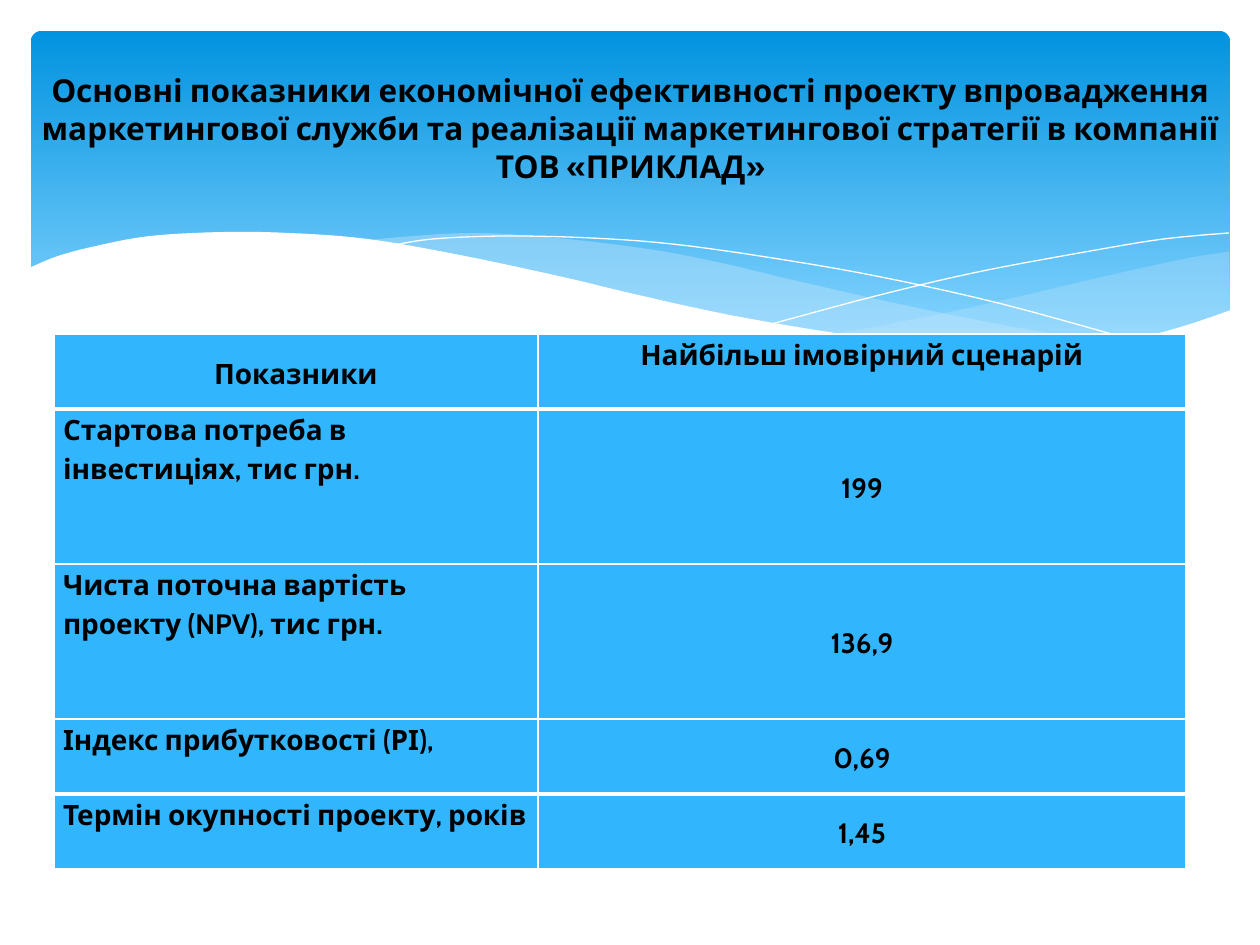
from lxml.etree import SubElement
from pptx import Presentation
from pptx.dml.color import RGBColor
from pptx.enum.shapes import MSO_SHAPE
from pptx.enum.text import MSO_ANCHOR, PP_ALIGN
from pptx.oxml.ns import qn
from pptx.util import Emu, Pt

PX = 914400 // 126
FONT = "Cabin"
COLORS = {
    "sky_dark": "0293E0",
    "sky_light": "83D3FE",
    "wave": "C6E7FC",
    "cell": "31B6FD",
    "white": "FFFFFF",
    "text": "000000",
}

TITLE = (
    "Основні показники економічної ефективності проекту впровадження "
    "маркетингової служби та реалізації маркетингової стратегії в компанії "
    "ТОВ «ПРИКЛАД»"
)
ROWS = [
    ("Показники", "Найбільш імовірний сценарій"),
    ("Стартова потреба в інвестиціях, тис грн.", "199"),
    ("Чиста поточна вартість проекту (NPV), тис грн.", "136,9"),
    ("Індекс прибутковості (РІ),", "0,69"),
    ("Термін окупності проекту, років", "1,45"),
]
COLUMN_WIDTHS = [484, 648]
ROW_HEIGHTS = [75, 155, 155, 75, 75]
THICK_RULES = (1, 4)

RIGHT_WAVE = [
    [(1229, 252), (1194, 257), (1142, 268), (1085, 281), (982, 305), (890, 324), (833, 334)],
    [(833, 334), (888, 341), (954, 348), (1026, 350), (1087, 347), (1150, 336),
     (1196, 324), (1230, 311)],
]
MIDDLE_WAVE = [
    [(360, 241), (413, 236), (479, 233), (557, 238), (648, 249), (717, 262), (793, 280),
     (890, 302), (977, 320), (1055, 334), (1125, 344)],
    [(1125, 344), (1068, 349), (1003, 350), (927, 347), (857, 338), (757, 321),
     (668, 302), (566, 280), (483, 261), (407, 247), (360, 241)],
]
FALLING_LINE = [[(389, 246), (433, 239), (505, 236), (591, 238), (672, 244), (766, 257),
                 (876, 276), (1002, 304), (1143, 343)]]
RISING_LINE = [[(772, 324), (876, 296), (978, 272), (1091, 251), (1164, 239), (1229, 233)]]
WHITE_WAVE = [
    [(1231, 310), (1184, 326), (1133, 339), (1071, 347), (1019, 349), (937, 345),
     (842, 334), (730, 315), (634, 294), (563, 277), (460, 255), (368, 239), (290, 233),
     (223, 232), (150, 236), (96, 246), (58, 256), (29, 268)],
    [(29, 415), (1231, 415)],
]


def px(value):
    return Emu(value * PX)


def color(name):
    return RGBColor.from_string(COLORS[name])


def smooth(points, steps=5):
    if len(points) < 3:
        return points
    padded = [points[0], *points, points[-1]]
    curve = [points[0]]
    for a, b, c, d in zip(padded, padded[1:], padded[2:], padded[3:]):
        for step in range(1, steps + 1):
            t = step / steps
            curve.append(tuple(
                (2 * q + (r - p) * t + (2 * p - 5 * q + 4 * r - s) * t ** 2
                 + (3 * q - p - 3 * r + s) * t ** 3) / 2
                for p, q, r, s in zip(a, b, c, d)
            ))
    return curve


def add_panel(page):
    panel = page.shapes.add_shape(
        MSO_SHAPE.ROUNDED_RECTANGLE, px(31), px(31), px(1199), px(340))
    panel.adjustments[0] = 0.03
    panel.shadow.inherit = False
    panel.line.fill.background()
    panel.fill.gradient()
    panel.fill.gradient_angle = 270
    stops = panel.fill.gradient_stops
    for stop, position, name in zip(stops, (0, 0.9), ("sky_dark", "sky_light")):
        stop.position = position
        stop.color.rgb = color(name)


def add_outline(page, edges, closed):
    points = [(x * PX, y * PX) for edge in edges for x, y in smooth(edge)]
    builder = page.shapes.build_freeform(*points[0], scale=1.0)
    builder.add_line_segments(points[1:], close=closed)
    outline = builder.convert_to_shape()
    outline.shadow.inherit = False
    return outline


def add_wave(page, edges, name, opacity=100):
    wave = add_outline(page, edges, True)
    wave.line.fill.background()
    wave.fill.solid()
    wave.fill.fore_color.rgb = color(name)
    if opacity < 100:
        solid = wave.fill._xPr.find(qn("a:solidFill"))
        SubElement(solid[0], qn("a:alpha"), val=str(opacity * 1000))


def add_curve(page, edges):
    curve = add_outline(page, edges, False)
    curve.fill.background()
    curve.line.color.rgb = color("white")
    curve.line.width = 0


def write(frame, text, size, align, spacing=None):
    frame.text = text
    paragraph = frame.paragraphs[0]
    paragraph.alignment = align
    paragraph.line_spacing = spacing
    span = paragraph.runs[0]
    span.font.name = FONT
    span.font.size = Pt(size)
    span.font.bold = True
    span.font.color.rgb = color("text")


def add_title(page):
    box = page.shapes.add_textbox(px(25), px(65), px(1211), px(90))
    box.text_frame.word_wrap = True
    write(box.text_frame, TITLE, 18, PP_ALIGN.CENTER)


def set_borders(cell, top, bottom):
    properties = cell._tc.get_or_add_tcPr()
    for side, width in (("L", 1), ("R", 1), ("T", top), ("B", bottom)):
        border = SubElement(properties, qn(f"a:ln{side}"), w=str(Pt(width)))
        solid = SubElement(border, qn("a:solidFill"))
        SubElement(solid, qn("a:srgbClr"), val=COLORS["white"])


def fill_cell(cell, text, row, column):
    rules = [3 if edge in THICK_RULES else 1 for edge in (row, row + 1)]
    set_borders(cell, *rules)
    cell.fill.solid()
    cell.fill.fore_color.rgb = color("cell")
    cell.margin_left = cell.margin_right = px(9)
    cell.margin_top = cell.margin_bottom = 0
    is_header, is_value = row == 0, column == 1
    cell.vertical_anchor = MSO_ANCHOR.MIDDLE if is_header != is_value else MSO_ANCHOR.TOP
    align = PP_ALIGN.CENTER if is_header or is_value else PP_ALIGN.LEFT
    write(cell.text_frame, text, 16, align, 1.15)


def add_indicators(page):
    table = page.shapes.add_table(
        len(ROWS), len(COLUMN_WIDTHS), px(54), px(334),
        px(sum(COLUMN_WIDTHS)), px(sum(ROW_HEIGHTS))).table
    for column, width in zip(table.columns, COLUMN_WIDTHS):
        column.width = px(width)
    for row, height in zip(table.rows, ROW_HEIGHTS):
        row.height = px(height)
    for row, texts in enumerate(ROWS):
        for column, text in enumerate(texts):
            fill_cell(table.cell(row, column), text, row, column)


def main():
    deck = Presentation()
    deck.slide_width, deck.slide_height = px(1260), px(945)
    page = deck.slides.add_slide(deck.slide_layouts[6])
    add_panel(page)
    add_wave(page, RIGHT_WAVE, "wave", 29)
    add_wave(page, MIDDLE_WAVE, "wave", 40)
    add_curve(page, FALLING_LINE)
    add_curve(page, RISING_LINE)
    add_wave(page, WHITE_WAVE, "white")
    add_title(page)
    add_indicators(page)
    deck.save("out.pptx")


if __name__ == "__main__":
    main()
